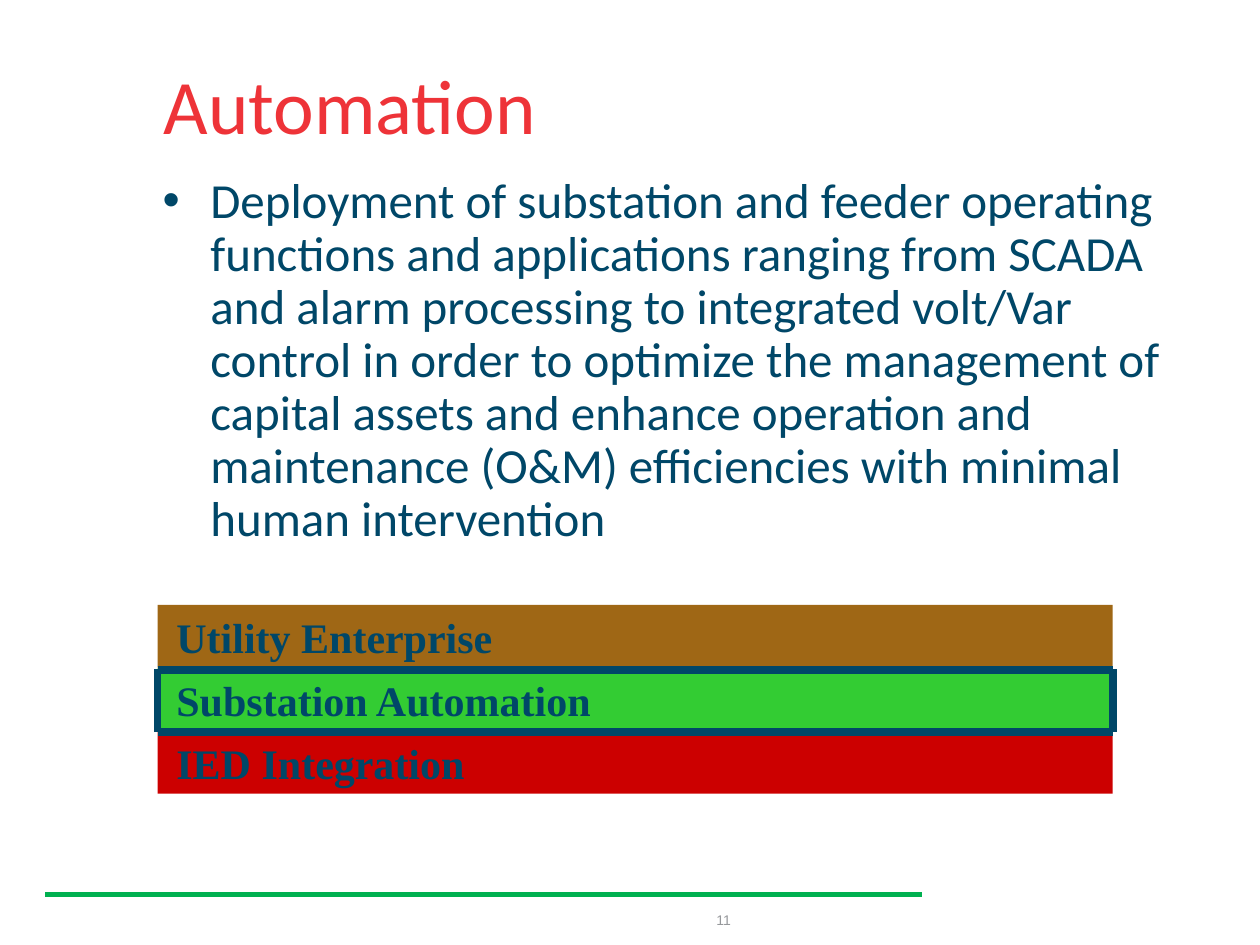
from dataclasses import dataclass

from pptx import Presentation
from pptx.dml.color import RGBColor
from pptx.enum import shapes, text
from pptx.oxml.ns import qn
from pptx.util import Inches, Pt


@dataclass(frozen=True)
class Theme:
    red: str = "EE3338"
    navy: str = "004768"
    gray: str = "96989B"
    rule: str = "00B050"
    enterprise: str = "9F6715"
    automation: str = "33CC33"
    integration: str = "CC0000"
    sans: str = "Calibri"
    serif: str = "Times New Roman"
    small: str = "Arial"
    title_size: int = 44
    body_size: int = 28
    layer_size: int = 24
    number_size: int = 8


THEME = Theme()
DEFINITION = (
    "Deployment of substation and feeder operating functions and applications "
    "ranging from SCADA and alarm processing to integrated volt/Var control in "
    "order to optimize the management of capital assets and enhance operation "
    "and maintenance (O&M) efficiencies with minimal human intervention"
)
LAYERS = (
    ("Utility Enterprise", THEME.enterprise),
    ("Substation Automation", THEME.automation),
    ("IED Integration", THEME.integration),
)
STACK_LEFT, STACK_TOP, STACK_WIDTH, LAYER_HEIGHT = 1.25, 4.8, 7.58, 0.5


def place(shape, left, top, width, height):
    shape.left, shape.top = Inches(left), Inches(top)
    shape.width, shape.height = Inches(width), Inches(height)


def write(shape, wording, font, size, color, bold=False, **paragraph_format):
    paragraph = shape.text_frame.paragraphs[0]
    paragraph.text = wording
    for name, value in paragraph_format.items():
        setattr(paragraph, name, value)
    for name, value in {"name": font, "size": Pt(size), "bold": bold}.items():
        setattr(paragraph.runs[0].font, name, value)
    paragraph.runs[0].font.color.rgb = RGBColor.from_string(color)
    return paragraph


def format_frame(shape, **frame_format):
    for name, value in frame_format.items():
        setattr(shape.text_frame, name, value)


def add_title(slide):
    title = slide.shapes.title
    place(title, 1.2, 0.46, 8.4, 0.82)
    format_frame(title, vertical_anchor=text.MSO_ANCHOR.MIDDLE,
                 auto_size=text.MSO_AUTO_SIZE.NONE)
    write(title, "Automation", THEME.sans, THEME.title_size, THEME.red,
          alignment=text.PP_ALIGN.LEFT, line_spacing=0.9)


def add_definition(slide):
    body = slide.placeholders[1]
    place(body, 1.19, 1.35, 8.31, 3.14)
    format_frame(body, auto_size=text.MSO_AUTO_SIZE.NONE)
    paragraph = write(body, DEFINITION, THEME.sans, THEME.body_size, THEME.navy,
                      line_spacing=0.9, space_before=Pt(0))
    properties = paragraph._p.get_or_add_pPr()
    properties.set("marL", str(Inches(0.38)))
    properties.set("indent", str(Inches(-0.38)))


def add_layer(slide, level, label, color):
    layer = slide.shapes.add_shape(
        shapes.MSO_SHAPE.RECTANGLE, Inches(STACK_LEFT),
        Inches(STACK_TOP + level * LAYER_HEIGHT),
        Inches(STACK_WIDTH), Inches(LAYER_HEIGHT))
    layer.shadow.inherit = False
    layer.fill.solid()
    layer.fill.fore_color.rgb = RGBColor.from_string(color)
    layer.line.fill.background()
    format_frame(layer, vertical_anchor=text.MSO_ANCHOR.MIDDLE,
                 word_wrap=False, margin_left=Inches(0.15))
    write(layer, label, THEME.serif, THEME.layer_size, THEME.navy, bold=True,
          alignment=text.PP_ALIGN.LEFT)


def add_line(slide, start, end, color, weight):
    line = slide.shapes.add_connector(
        shapes.MSO_CONNECTOR.STRAIGHT, *map(Inches, start + end))
    line.line.color.rgb = RGBColor.from_string(color)
    line.line.width = Pt(weight)
    properties = line._element.spPr
    properties.append(properties.makeelement(qn("a:effectLst"), {}))


def frame_automation_layer(slide):
    left, right = STACK_LEFT, STACK_LEFT + STACK_WIDTH
    top = STACK_TOP + LAYER_HEIGHT + 0.01
    bottom = top + LAYER_HEIGHT
    for y in (bottom, top + 0.01):
        add_line(slide, (left, y), (right, y), THEME.navy, 4.5)
    for x in (left, right):
        add_line(slide, (x, bottom), (x, top), THEME.navy, 4.5)


def add_page_number(slide):
    number = slide.shapes.add_textbox(*map(Inches, (3.65, 7.1, 2.25, 0.4)))
    format_frame(number, word_wrap=True, vertical_anchor=text.MSO_ANCHOR.MIDDLE)
    write(number, "11", THEME.small, THEME.number_size, THEME.gray,
          alignment=text.PP_ALIGN.RIGHT)


def main():
    deck = Presentation()
    deck.slide_width, deck.slide_height = Inches(10), Inches(7.5)
    slide = deck.slides.add_slide(deck.slide_layouts[1])
    add_line(slide, (0.36, 7.1), (7.32, 7.1), THEME.rule, 3)
    add_page_number(slide)
    add_title(slide)
    add_definition(slide)
    for level, (label, color) in enumerate(LAYERS):
        add_layer(slide, level, label, color)
    frame_automation_layer(slide)
    deck.save("out.pptx")


if __name__ == "__main__":
    main()
